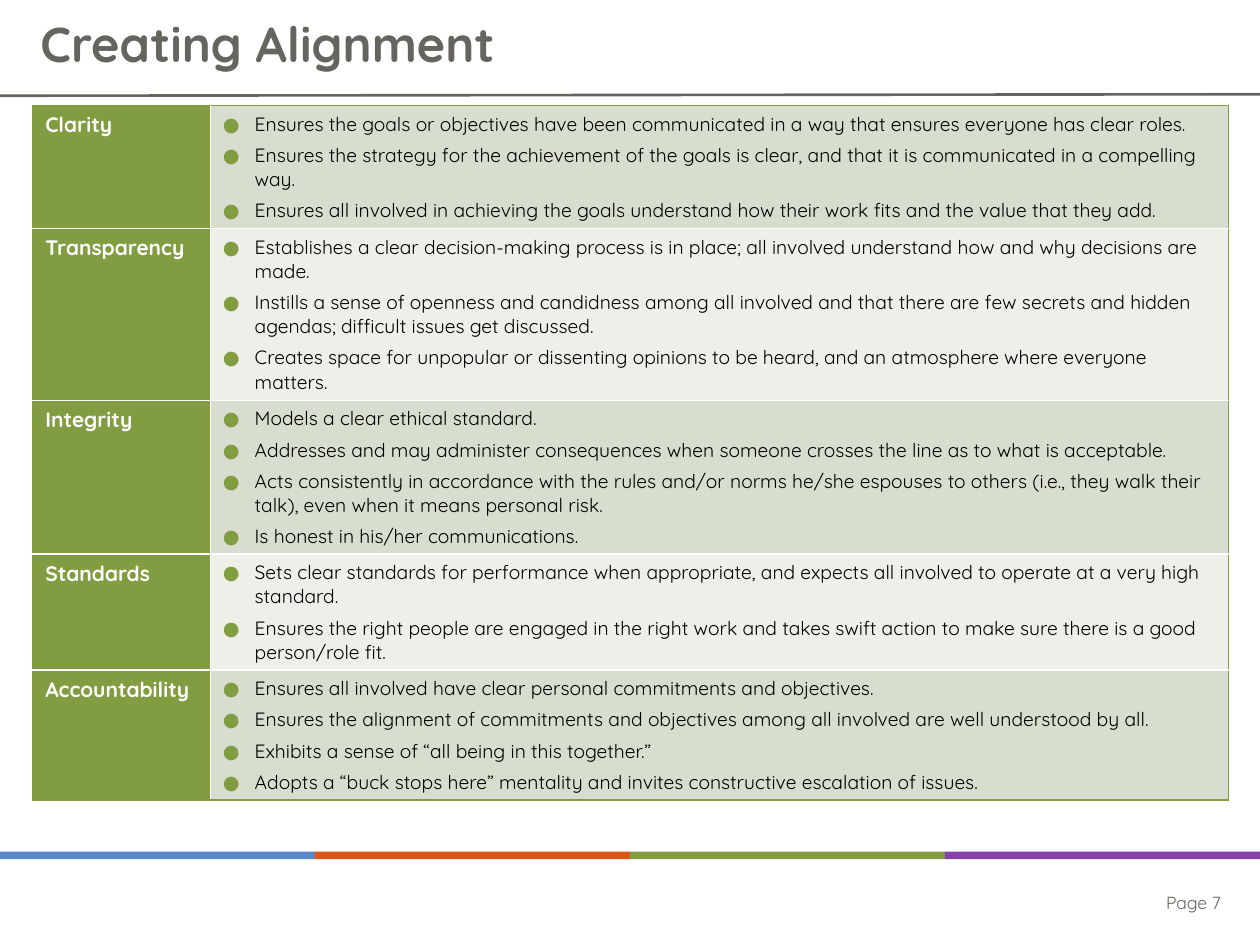
from lxml import etree
from pptx import Presentation
from pptx.dml.color import RGBColor
from pptx.enum.shapes import MSO_CONNECTOR, MSO_SHAPE
from pptx.enum.text import MSO_ANCHOR, PP_ALIGN
from pptx.oxml.ns import qn
from pptx.util import Cm, Pt

LEFT, RIGHT = PP_ALIGN.LEFT, PP_ALIGN.RIGHT
TOP, MIDDLE = MSO_ANCHOR.TOP, MSO_ANCHOR.MIDDLE
RECTANGLE = MSO_SHAPE.RECTANGLE
STRAIGHT = MSO_CONNECTOR.STRAIGHT

TITLE = "Creating Alignment"
PAGE_LABEL = "Page 7"
PRINCIPLES = [
    ("Clarity", 2.48, [
        "Ensures the goals or objectives have been communicated in a way that ensures everyone has clear roles.",
        "Ensures the strategy for the achievement of the goals is clear, and that it is communicated in a compelling way.",
        "Ensures all involved in achieving the goals understand how their work fits and the value that they add.",
    ]),
    ("Transparency", 3.46, [
        "Establishes a clear decision-making process is in place; all involved understand how and why decisions are made.",
        "Instills a sense of openness and candidness among all involved and that there are few secrets and hidden agendas; difficult issues get discussed.",
        "Creates space for unpopular or dissenting opinions to be heard, and an atmosphere where everyone matters.",
    ]),
    ("Integrity", 3.1, [
        "Models a clear ethical standard.",
        "Addresses and may administer consequences when someone crosses the line as to what is acceptable.",
        "Acts consistently in accordance with the rules and/or norms he/she espouses to others (i.e., they walk their talk), even when it means personal risk.",
        "Is honest in his/her communications.",
    ]),
    ("Standards", 2.34, [
        "Sets clear standards for performance when appropriate, and expects all involved to operate at a very high standard.",
        "Ensures the right people are engaged in the right work and takes swift action to make sure there is a good person/role fit.",
    ]),
    ("Accountability", 2.62, [
        "Ensures all involved have clear personal commitments and objectives.",
        "Ensures the alignment of commitments and objectives among all involved are well understood by all.",
        "Exhibits a sense of “all being in this together.”",
        "Adopts a “buck stops here” mentality and invites constructive escalation of issues.",
    ]),
]

THEME = {
    "font": "Quicksand",
    "gray": "66645E", "green": "829C42", "white": "FFFFFF", "black": "000000",
    "bands": ["D8DECF", "EDEFE9"],
    "stripes": ["5A87C6", "DF5517", "829C42", "8640A6"],
    "title": 28, "heading": 12, "body": 11, "label": 10,
}
WIDTH, HEIGHT = 25.4, 19.05
COLUMNS = [3.58, 20.52]
BULLET_INDENT = Cm(0.64)


def rgb(value):
    return RGBColor.from_string(value)


def write(para, text, size, color, bold=False, **layout):
    for name, value in layout.items():
        setattr(para, name, value)
    span = para.add_run()
    span.text = text
    values = {"name": THEME["font"], "size": Pt(THEME[size]), "bold": bold}
    for name, value in values.items():
        setattr(span.font, name, value)
    span.font.color.rgb = rgb(THEME[color])


def add_bullet(para):
    props = para._p.get_or_add_pPr()
    props.set("marL", str(BULLET_INDENT))
    props.set("indent", str(-BULLET_INDENT))
    color = etree.SubElement(props, qn("a:buClr"))
    etree.SubElement(color, qn("a:srgbClr"), val=THEME["green"])
    etree.SubElement(props, qn("a:buFont"), typeface=THEME["font"])
    etree.SubElement(props, qn("a:buChar"), char="●")


def format_cell(cell, fill, green_sides):
    props = cell._tc.get_or_add_tcPr()
    for side in "LRTB":
        border = etree.SubElement(props, qn("a:ln" + side), w=str(Pt(1)))
        paint = etree.SubElement(border, qn("a:solidFill"))
        color = THEME["green" if side in green_sides else "white"]
        etree.SubElement(paint, qn("a:srgbClr"), val=color)
    cell.fill.solid()
    cell.fill.fore_color.rgb = rgb(fill)
    cell.vertical_anchor = TOP


def add_frame(page):
    rule = page.shapes.add_connector(STRAIGHT, 0, Cm(1.93), Cm(WIDTH), Cm(1.9))
    rule.line.color.rgb = rgb(THEME["gray"])
    rule.line.width = Pt(1.5)
    etree.SubElement(rule._element.spPr, qn("a:effectLst"))

    stripe_width = WIDTH / len(THEME["stripes"])
    for index, color in enumerate(THEME["stripes"]):
        stripe = page.shapes.add_shape(
            RECTANGLE, Cm(index * stripe_width), Cm(17.17), Cm(stripe_width), Cm(0.15))
        stripe.shadow.inherit = False
        stripe.fill.solid()
        stripe.fill.fore_color.rgb = rgb(color)
        stripe.line.fill.background()

    box = page.shapes.add_textbox(Cm(20.62), Cm(17.86), Cm(4.24), Cm(0.69))
    box.text_frame.word_wrap = True
    write(box.text_frame.paragraphs[0], PAGE_LABEL, "label", "gray", alignment=RIGHT)


def add_title(page):
    title = page.shapes.title
    place = {"left": Cm(0.56), "top": Cm(0), "width": Cm(24.28), "height": Cm(1.88)}
    for name, value in place.items():
        setattr(title, name, value)
    title.text_frame.vertical_anchor = MIDDLE
    write(title.text_frame.paragraphs[0], TITLE, "title", "gray", True,
          alignment=LEFT, line_spacing=0.9)


def add_principles(page):
    total = sum(height for _, height, _ in PRINCIPLES)
    table = page.shapes.add_table(
        len(PRINCIPLES), len(COLUMNS), Cm(0.66), Cm(2.13), Cm(sum(COLUMNS)), Cm(total)).table
    table.first_row = table.horz_banding = False
    for column, width in zip(table.columns, COLUMNS):
        column.width = Cm(width)

    last = len(PRINCIPLES) - 1
    for index, (heading, height, points) in enumerate(PRINCIPLES):
        table.rows[index].height = Cm(height)
        outer = ("T" if index == 0 else "") + ("B" if index == last else "")
        name_cell, points_cell = table.cell(index, 0), table.cell(index, 1)
        format_cell(name_cell, THEME["green"], outer + "L")
        format_cell(points_cell, THEME["bands"][index % 2], outer + "R")
        write(name_cell.text_frame.paragraphs[0], heading, "heading", "white", True,
              space_after=Pt(6))
        frame = points_cell.text_frame
        for number, point in enumerate(points):
            para = frame.add_paragraph() if number else frame.paragraphs[0]
            add_bullet(para)
            write(para, point, "body", "black", space_after=Pt(4))


def main():
    deck = Presentation()
    deck.slide_width, deck.slide_height = Cm(WIDTH), Cm(HEIGHT)
    page = deck.slides.add_slide(deck.slide_layouts[5])
    add_frame(page)
    add_title(page)
    add_principles(page)
    deck.save("out.pptx")


if __name__ == "__main__":
    main()
